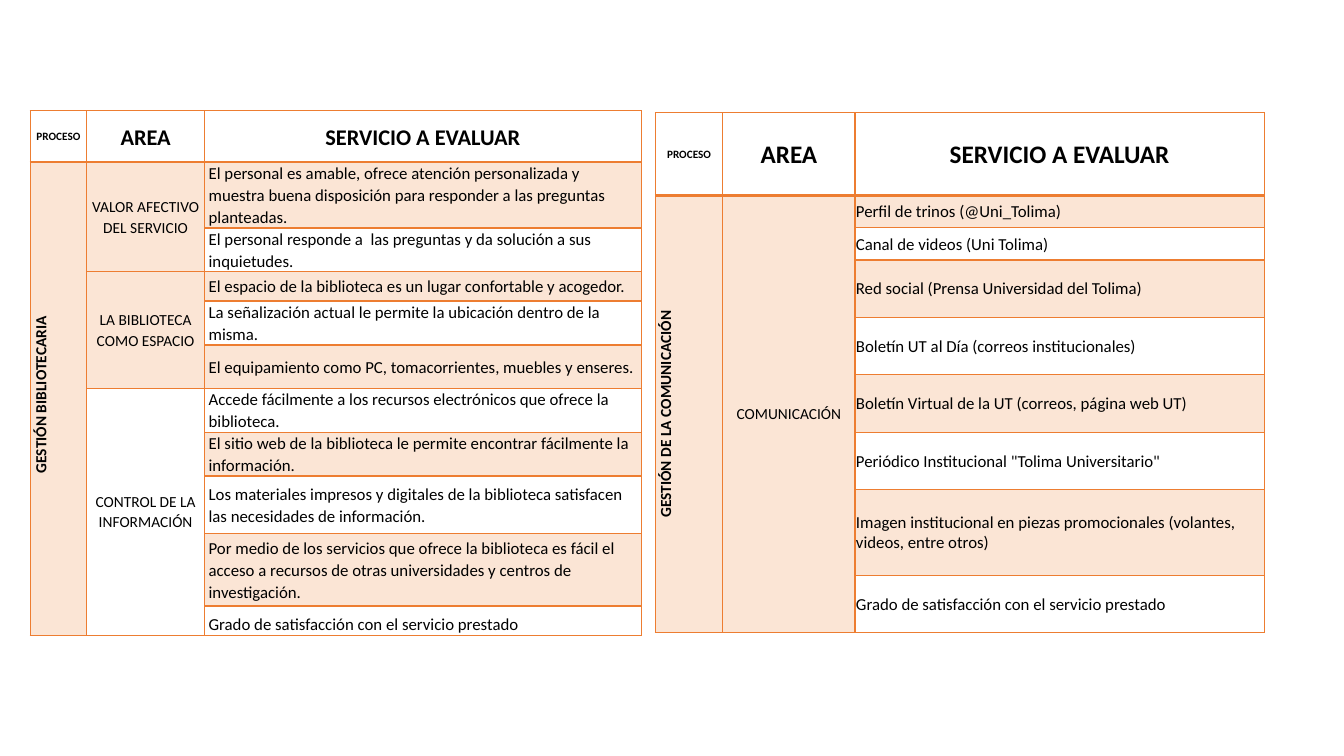
import dataclasses

import lxml.etree
import pptx
import pptx.dml.color
import pptx.enum.text
import pptx.oxml.ns
import pptx.util

ANCHOR = pptx.enum.text.MSO_ANCHOR
ALIGN = pptx.enum.text.PP_ALIGN


@dataclasses.dataclass(frozen=True)
class Theme:
    font: str = "Calibri"
    text: str = "000000"
    accent: str = "ED7D31"
    tint: int = 20
    thin: float = 1
    thick: float = 2
    process_heading: int = 8
    group: int = 11
    service: int = 12


THEME = Theme()
SLIDE_SIZE = (13.33, 7.5)
HEADINGS = ("PROCESO", "AREA", "SERVICIO A EVALUAR")


@dataclasses.dataclass(frozen=True)
class Evaluation:
    process: str
    areas: tuple  # (name, shaded, services)
    columns: tuple
    rows: tuple
    margins: tuple  # left, top, right, bottom
    heading_size: int
    line_spacing: float = 1.0
    process_indent: float = 0
    last_anchor: ANCHOR = ANCHOR.MIDDLE


LIBRARY = Evaluation(
    process="GESTIÓN BIBLIOTECARIA",
    areas=(
        ("VALOR AFECTIVO DEL SERVICIO", True, (
            "El personal es amable, ofrece atención personalizada y muestra buena "
            "disposición para responder a las preguntas planteadas.",
            "El personal responde a  las preguntas y da solución a sus inquietudes.")),
        ("LA BIBLIOTECA COMO ESPACIO", True, (
            "El espacio de la biblioteca es un lugar confortable y acogedor.",
            "La señalización actual le permite la ubicación dentro de la misma.",
            "El equipamiento como PC, tomacorrientes, muebles y enseres.")),
        ("CONTROL DE LA INFORMACIÓN", False, (
            "Accede fácilmente a los recursos electrónicos que ofrece la biblioteca.",
            "El sitio web de la biblioteca le permite encontrar fácilmente la información.",
            "Los materiales impresos y digitales de la biblioteca satisfacen las "
            "necesidades de información.",
            "Por medio de los servicios que ofrece la biblioteca es fácil el acceso a "
            "recursos de otras universidades y centros de investigación.",
            "Grado de satisfacción con el servicio prestado")),
    ),
    columns=(0.56, 1.17, 4.33),
    rows=(0.51, 0.57, 0.43, 0.29, 0.29, 0.43, 0.43, 0.43, 0.57, 0.72, 0.29),
    margins=(0.04, 0, 0.04, 0),
    heading_size=16,
    line_spacing=1.07,
    process_indent=0.08,
    last_anchor=ANCHOR.BOTTOM,
)

COMMUNICATION = Evaluation(
    process="GESTIÓN DE LA COMUNICACIÓN",
    areas=(
        ("COMUNICACIÓN", True, (
            "Perfil de trinos (@Uni_Tolima)",
            "Canal de videos (Uni Tolima)",
            "Red social (Prensa Universidad del Tolima)",
            "Boletín UT al Día (correos institucionales)",
            "Boletín Virtual de la UT (correos, página web UT)",
            "Periódico Institucional \"Tolima Universitario\"",
            "Imagen institucional en piezas promocionales (volantes, videos, entre otros)",
            "Grado de satisfacción con el servicio prestado")),
    ),
    columns=(0.67, 1.31, 4.06),
    rows=(0.82, 0.32, 0.32, 0.57, 0.57, 0.57, 0.57, 0.85, 0.57),
    margins=(0.01, 0.01, 0.01, 0),
    heading_size=18,
)


def add_child(parent, tag, **attributes):
    child = lxml.etree.SubElement(parent, pptx.oxml.ns.qn(tag))
    for name, value in attributes.items():
        child.set(name, str(value))
    return child


def frame_cell(cell, margins, top, bottom):
    """Set margins and borders, and leave the cell without fill."""
    (cell.margin_left, cell.margin_top,
     cell.margin_right, cell.margin_bottom) = map(pptx.util.Inches, margins)
    properties = cell._tc.get_or_add_tcPr()
    widths = {"L": THEME.thin, "R": THEME.thin, "T": top, "B": bottom}
    for side, width in widths.items():
        line = add_child(properties, f"a:ln{side}", w=pptx.util.Pt(width))
        add_child(add_child(line, "a:solidFill"), "a:srgbClr", val=THEME.accent)
    cell.fill.background()


def shade_cell(cell):
    cell.fill.solid()
    cell.fill.fore_color.rgb = pptx.dml.color.RGBColor.from_string(THEME.accent)
    color = cell._tc.tcPr.find(".//" + pptx.oxml.ns.qn("a:solidFill") + "[last()]/"
                               + pptx.oxml.ns.qn("a:srgbClr"))
    fill = cell._tc.tcPr.findall(pptx.oxml.ns.qn("a:solidFill"))[-1]
    color = fill[0]
    add_child(color, "a:alpha", val=THEME.tint * 1000)


def write_cell(cell, text, size, spacing, bold=False, align=ALIGN.CENTER,
               anchor=ANCHOR.MIDDLE):
    cell.text_frame.text = text
    cell.vertical_anchor = anchor
    paragraph = cell.text_frame.paragraphs[0]
    paragraph.alignment = align
    paragraph.line_spacing = spacing
    font = paragraph.runs[0].font
    font.name, font.size, font.bold = THEME.font, pptx.util.Pt(size), bold
    font.color.rgb = pptx.dml.color.RGBColor.from_string(THEME.text)


def add_evaluation(slide, left, top, evaluation):
    """Place one evaluation table with its top left corner at the given point."""
    rows, columns = evaluation.rows, evaluation.columns
    spacing = evaluation.line_spacing
    box = map(pptx.util.Inches, (left, top, sum(columns), sum(rows)))
    table = slide.shapes.add_table(len(rows), len(columns), *box).table
    table.first_row = table.horz_banding = False
    for column, width in zip(table.columns, columns):
        column.width = pptx.util.Inches(width)
    for row_index, (row, height) in enumerate(zip(table.rows, rows)):
        row.height = pptx.util.Inches(height)
        for cell in row.cells:
            frame_cell(cell, evaluation.margins,
                       top=THEME.thick if row_index == 1 else THEME.thin,
                       bottom=THEME.thick if row_index == 0 else THEME.thin)

    # Heading row
    sizes = (THEME.process_heading, evaluation.heading_size, evaluation.heading_size)
    for index, (heading, size) in enumerate(zip(HEADINGS, sizes)):
        write_cell(table.cell(0, index), heading, size, spacing, bold=True)

    # Process column, read upwards
    process = table.cell(1, 0)
    process.merge(table.cell(len(rows) - 1, 0))
    write_cell(process, evaluation.process, THEME.group, spacing, bold=True)
    process._tc.tcPr.set("vert", "vert270")
    indent = pptx.util.Inches(evaluation.process_indent)
    process.text_frame.paragraphs[0]._p.get_or_add_pPr().set("marL", str(int(indent)))
    shade_cell(process)

    # Areas with their services, every other service shaded
    row_index = 1
    for name, shaded, services in evaluation.areas:
        area = table.cell(row_index, 1)
        area.merge(table.cell(row_index + len(services) - 1, 1))
        write_cell(area, name, THEME.group, spacing)
        if shaded:
            shade_cell(area)
        for service in services:
            is_last = row_index == len(rows) - 1
            cell = table.cell(row_index, 2)
            write_cell(cell, service, THEME.service, spacing, align=ALIGN.LEFT,
                       anchor=evaluation.last_anchor if is_last else ANCHOR.MIDDLE)
            if row_index % 2:
                shade_cell(cell)
            row_index += 1


def main():
    presentation = pptx.Presentation()
    presentation.slide_width, presentation.slide_height = map(pptx.util.Inches, SLIDE_SIZE)
    slide = presentation.slides.add_slide(presentation.slide_layouts[6])
    add_evaluation(slide, 0.3, 1.1, LIBRARY)
    add_evaluation(slide, 6.5, 1.12, COMMUNICATION)
    presentation.save("out.pptx")


if __name__ == "__main__":
    main()
